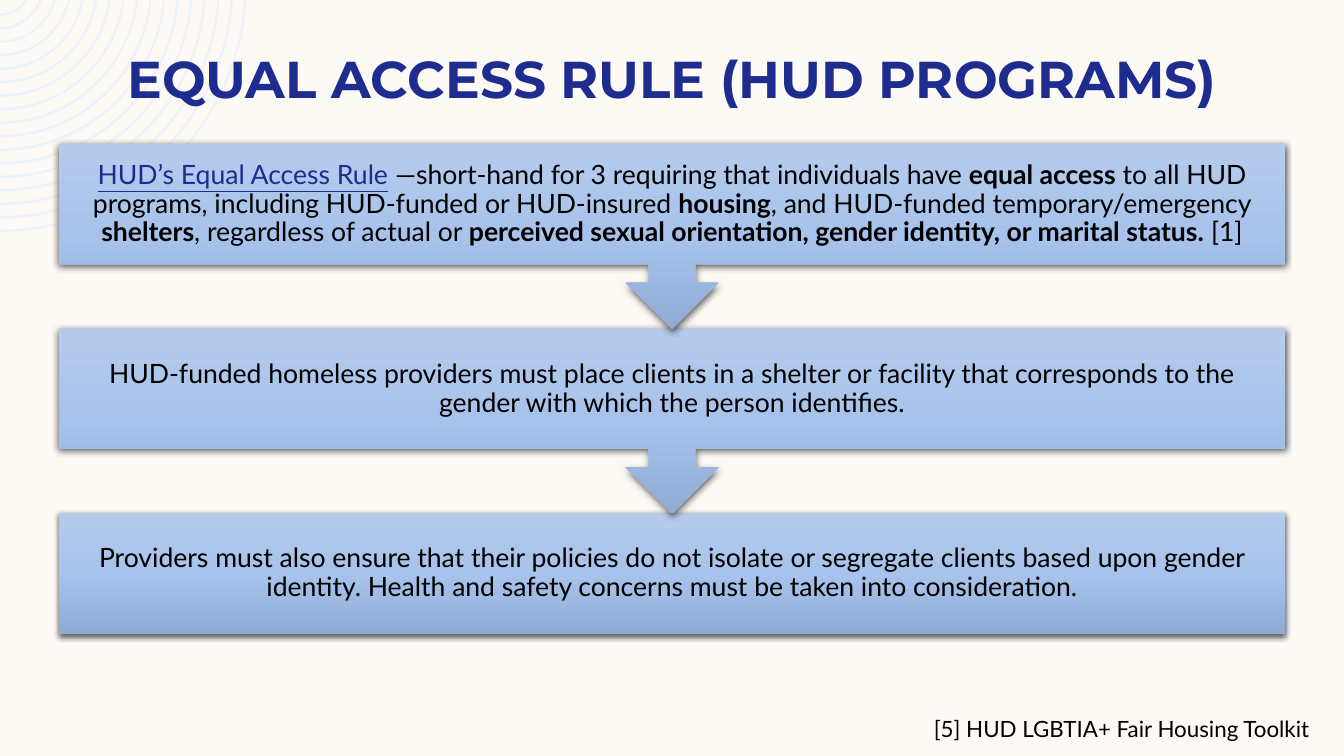
from math import asin, cos, degrees, sin

from pptx import Presentation
from pptx.dml.color import RGBColor
from pptx.enum.shapes import MSO_SHAPE as Preset
from pptx.enum.text import MSO_ANCHOR as Anchor, MSO_AUTO_SIZE as AutoSize, PP_ALIGN as Align
from pptx.oxml import parse_xml
from pptx.oxml.ns import nsdecls, qn
from pptx.util import Pt

TITLE = "EQUAL ACCESS RULE (HUD PROGRAMS)"
STEPS = [
    [
        ("HUD’s Equal Access Rule", "link"),
        (" —short-hand for 3 requiring that individuals have ", ""),
        ("equal access", "bold"),
        (" to all HUD programs, including HUD-funded or HUD-insured ", ""),
        ("housing", "bold"),
        (", and HUD-funded temporary/emergency ", ""),
        ("shelters", "bold"),
        (", regardless of actual or ", ""),
        ("perceived sexual orientation, gender identity, or marital status.", "bold"),
        (" [1]", ""),
    ],
    [("HUD-funded homeless providers must place clients in a shelter or facility "
      "that corresponds to the gender with which the person identifies.", "")],
    [("Providers must also ensure that their policies do not isolate or segregate "
      "clients based upon gender identity. Health and safety concerns must be "
      "taken into consideration.", "")],
]
SOURCE = "[5] HUD LGBTIA+ Fair Housing Toolkit"

CREAM, NAVY, BLACK, RING_BLUE = "FDFAF6", "1F2C8F", "000000", "EEF3FA"
GRADIENT = [(0, "B6CBEC"), (50, "A7C2EB"), (100, "90ACD5")]

PX = 914400 / 100.8
BOX_LEFT, BOX_WIDTH, BOX_HEIGHT, CALLOUT_HEIGHT = 59, 1226, 121, 185
FIRST_TOP, LAST_TOP = 144, 513
RING_COUNT, RING_OUTER, RING_INNER, RING_WIDTH, RING_RISE = 17, 247, 31, 2.4, 15
FINE = 100


def px(*lengths):
    return [round(length * PX) for length in lengths]


def color(hex_string):
    return RGBColor.from_string(hex_string)


def style(font, size, hex_string, name="Lato", bold=None):
    font.name, font.size, font.bold = name, Pt(size), bold
    font.color.rgb = color(hex_string)


def arc_ends(radius):
    """Ends, on the top and left edges, of a circle centred above the corner."""
    return [(FINE * radius * cos(asin(RING_RISE / radius)), 0),
            (0, FINE * (radius - RING_RISE))]


def bend(line, radius, inward):
    """Turn a straight side of a ring into the arc between its ends."""
    start = degrees(asin(RING_RISE / radius))
    first, sweep = (90, start - 90) if inward else (start, 90 - start)
    size = round(FINE * radius)
    line.getparent().replace(line, parse_xml(
        f'<a:arcTo {nsdecls("a")} wR="{size}" hR="{size}" '
        f'stAng="{round(first * 60000)}" swAng="{round(sweep * 60000)}"/>'))


def draw_rings(page):
    gap = (RING_OUTER - RING_INNER) / (RING_COUNT - 1)
    radii = [RING_OUTER - index * gap for index in range(RING_COUNT)]
    builder = page.shapes.build_freeform(*arc_ends(RING_OUTER)[0], scale=PX / FINE)
    for radius in radii:
        points = arc_ends(radius) + arc_ends(radius - RING_WIDTH)[::-1]
        if radius != RING_OUTER:
            builder.move_to(*points[0])
        builder.add_line_segments(points[1:], close=True)
    rings = builder.convert_to_shape()
    lines = list(rings._element.iter(qn("a:lnTo")))
    for radius, outer, inner in zip(radii, lines[0::3], lines[2::3]):
        bend(outer, radius, False)
        bend(inner, radius - RING_WIDTH, True)
    rings.shadow.inherit = False
    rings.fill.solid()
    rings.fill.fore_color.rgb = color(RING_BLUE)
    rings.line.fill.background()
    page.shapes._spTree.insert(2, rings._element)


def add_gradient_and_shadow(shape):
    stops = "".join(f'<a:gs pos="{pos * 1000}"><a:srgbClr val="{hue}"/></a:gs>'
                    for pos, hue in GRADIENT)
    shape.line.fill.background()
    properties = shape._element.spPr
    properties.insert(2, parse_xml(
        f'<a:gradFill {nsdecls("a")} rotWithShape="0"><a:gsLst>{stops}</a:gsLst>'
        '<a:lin ang="5400000" scaled="0"/></a:gradFill>'))
    properties.append(parse_xml(
        f'<a:effectLst {nsdecls("a")}><a:outerShdw blurRad="57150" dist="19050" '
        f'dir="5400000" algn="ctr" rotWithShape="0"><a:srgbClr val="{BLACK}">'
        '<a:alpha val="63000"/></a:srgbClr></a:outerShdw></a:effectLst>'))


def draw_step(page, top, spans, is_last):
    preset = Preset.RECTANGLE if is_last else Preset.UP_ARROW_CALLOUT
    height = BOX_HEIGHT if is_last else CALLOUT_HEIGHT
    panel = page.shapes.add_shape(preset, *px(BOX_LEFT, top, BOX_WIDTH, height))
    panel.rotation = 0 if is_last else 180
    add_gradient_and_shadow(panel)

    box = page.shapes.add_textbox(*px(BOX_LEFT, top, BOX_WIDTH, BOX_HEIGHT))
    frame = box.text_frame
    frame.word_wrap = True
    frame.vertical_anchor = Anchor.MIDDLE
    frame.margin_left = frame.margin_right = frame.margin_top = frame.margin_bottom = px(15)[0]
    para = frame.paragraphs[0]
    para.alignment, para.line_spacing = Align.CENTER, 0.9
    style(para.font, 19, BLACK)
    for text, kind in spans:
        span = para.add_run()
        span.text = text
        style(span.font, 19, NAVY if kind == "link" else BLACK, bold=kind == "bold")
        span.font.underline = kind == "link"


def draw_title(page):
    title = page.shapes.title
    title.left, title.top, title.width, title.height = px(84, 49, 1176, 85)
    frame = title.text_frame
    frame.text = TITLE
    frame.auto_size = AutoSize.NONE
    frame.vertical_anchor = Anchor.TOP
    para = frame.paragraphs[0]
    para.alignment, para.line_spacing = Align.CENTER, 0.9
    style(para.font, 37, NAVY, "Montserrat", True)


def draw_source(page):
    box = page.shapes.add_textbox(*px(924, 710, 400, 40))
    box.text_frame.word_wrap = True
    box.text_frame.text = SOURCE
    style(box.text_frame.paragraphs[0].font, 16, BLACK)


def main():
    deck = Presentation()
    deck.slide_width, deck.slide_height = px(1344, 756)
    page = deck.slides.add_slide(deck.slide_layouts[5])
    page.background.fill.solid()
    page.background.fill.fore_color.rgb = color(CREAM)
    draw_rings(page)
    draw_title(page)
    pitch = (LAST_TOP - FIRST_TOP) / (len(STEPS) - 1)
    for index in reversed(range(len(STEPS))):
        draw_step(page, FIRST_TOP + index * pitch, STEPS[index], index == len(STEPS) - 1)
    draw_source(page)
    deck.save("out.pptx")


if __name__ == "__main__":
    main()
